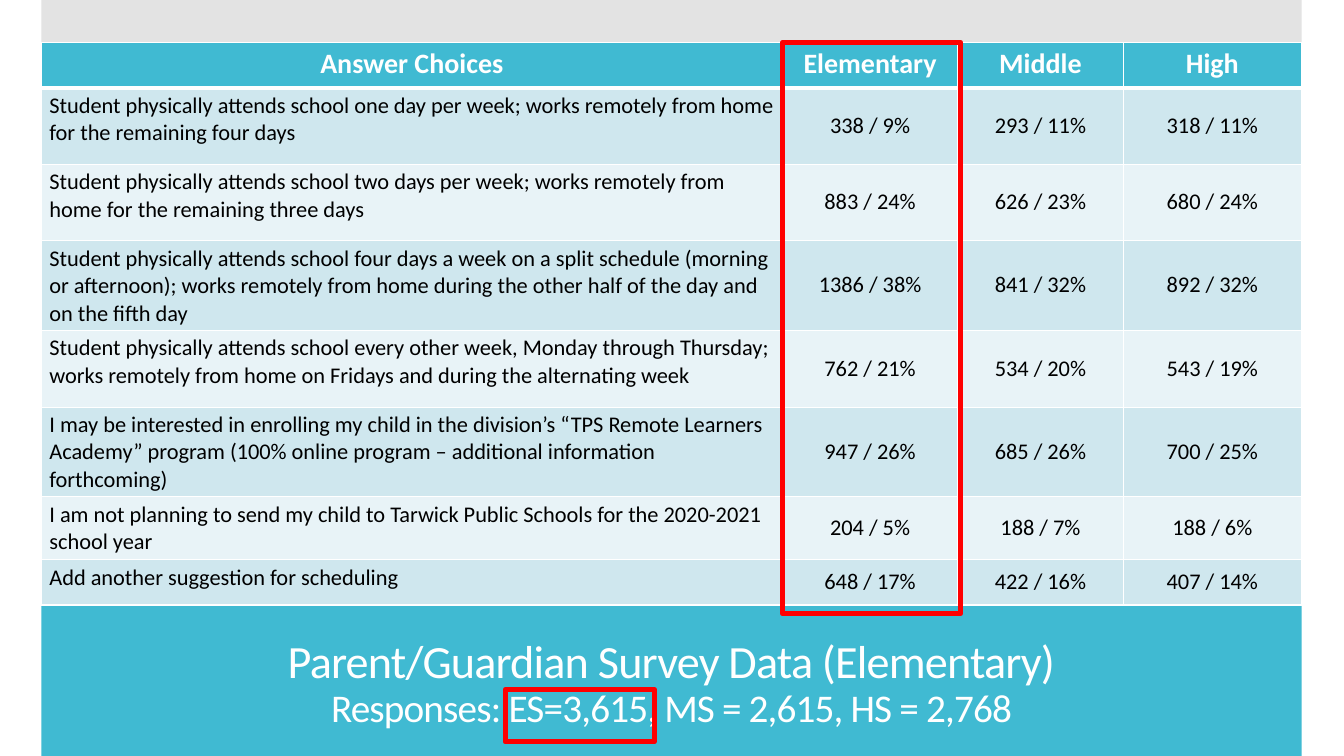
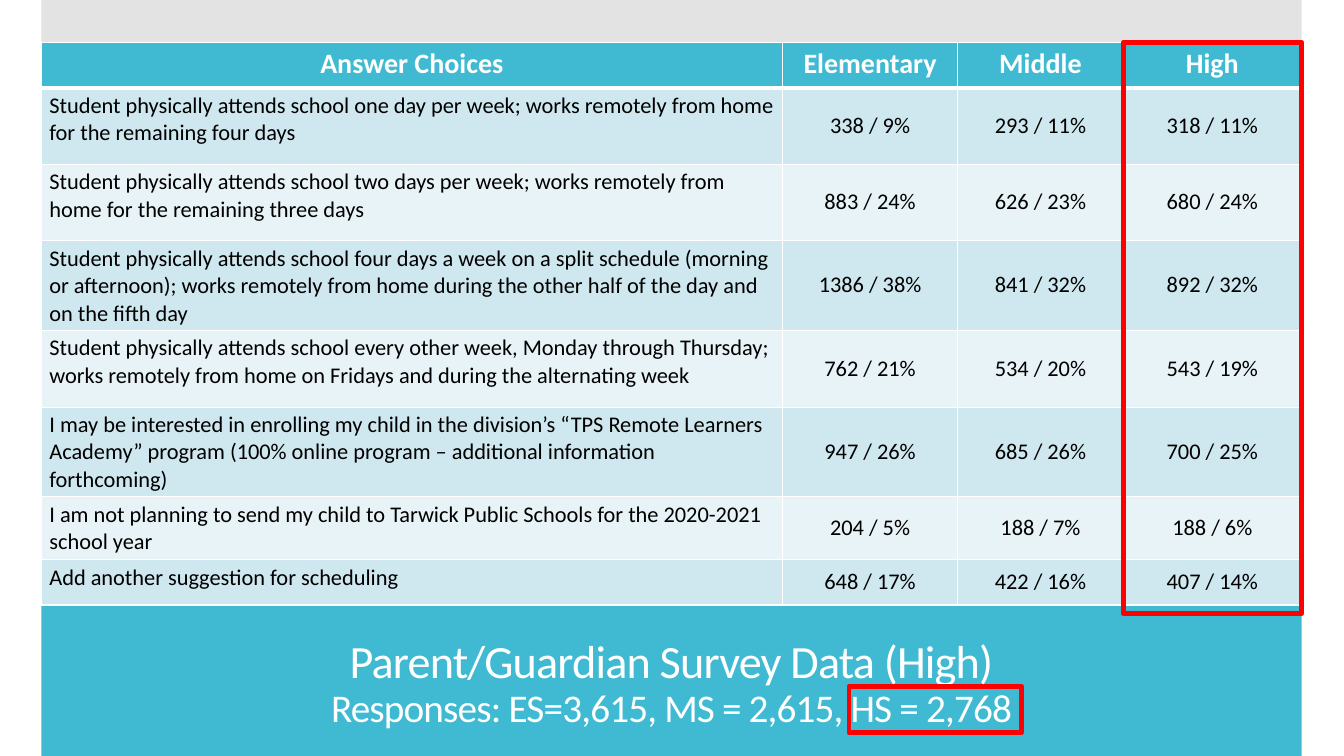
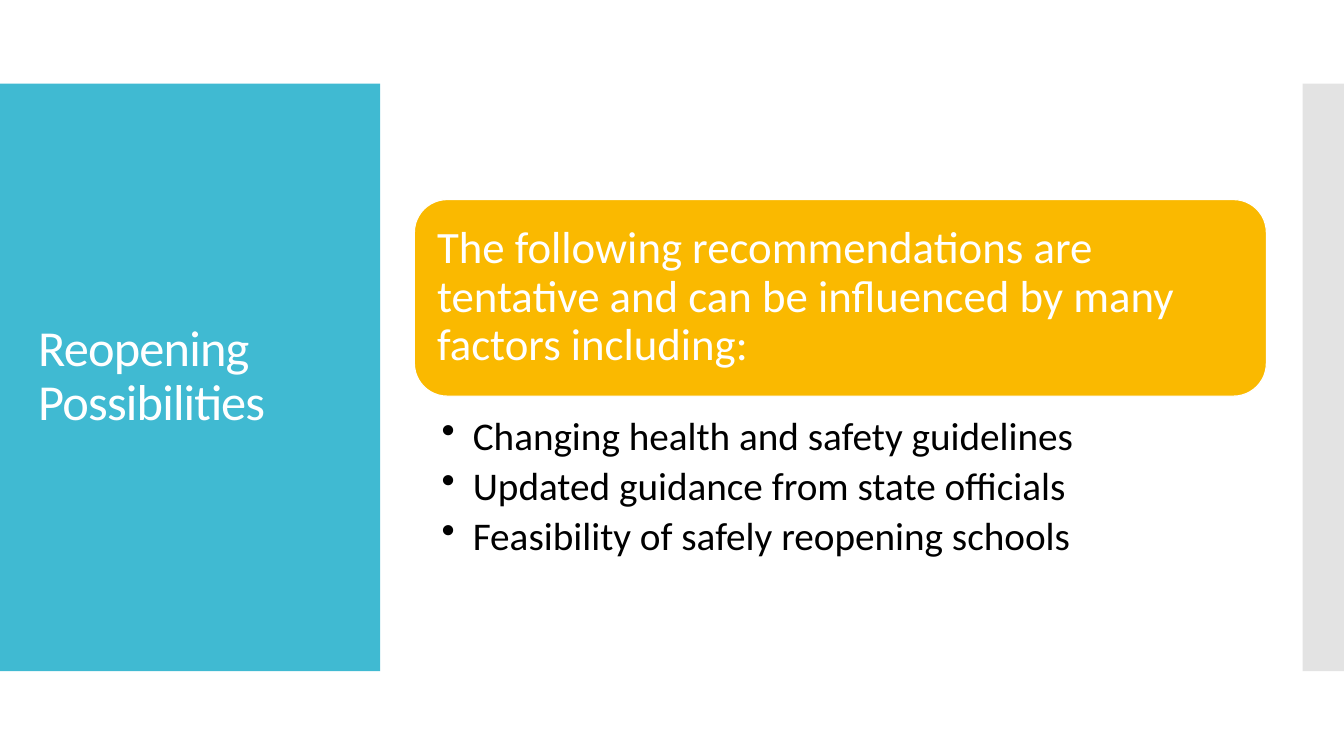
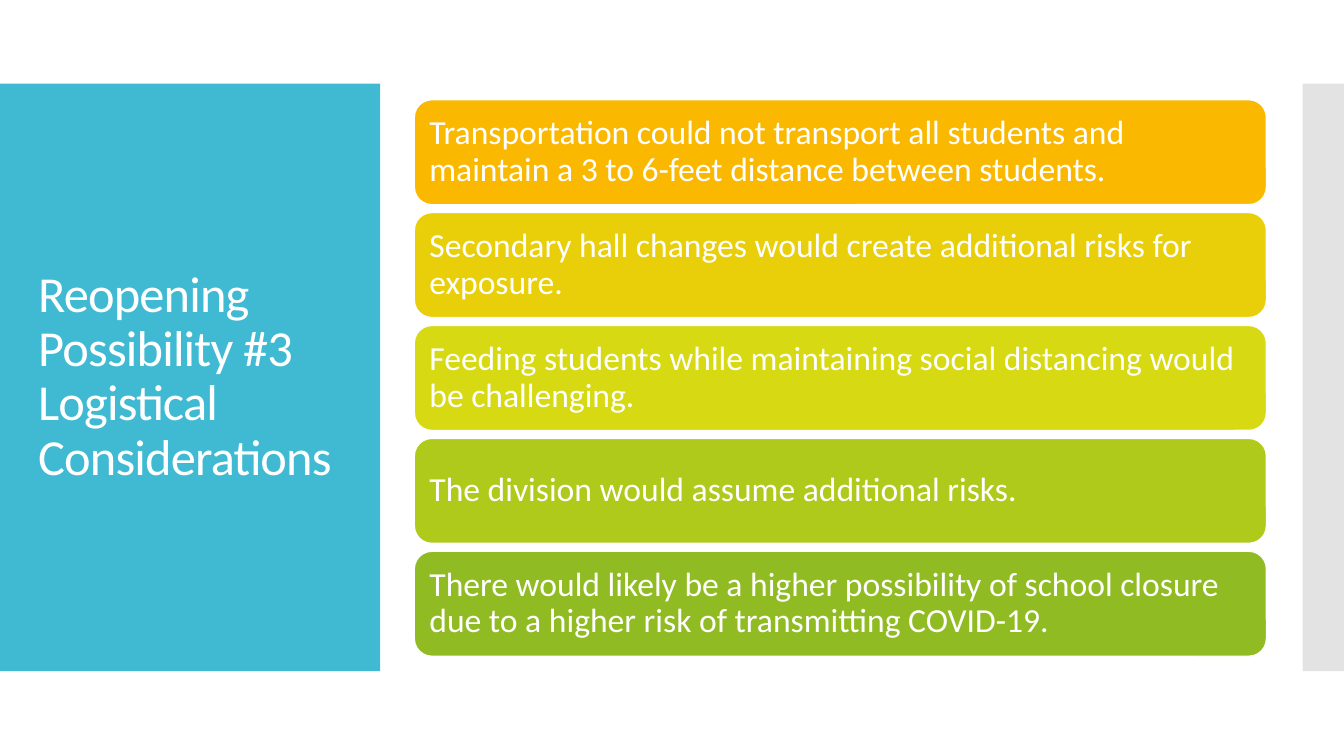
import dataclasses
import typing

import lxml.etree
import pptx
import pptx.dml.color
import pptx.enum.shapes
import pptx.enum.text
import pptx.oxml.ns
import pptx.util

Inches = pptx.util.Inches
Pt = pptx.util.Pt
Align = pptx.enum.text.PP_ALIGN
Anchor = pptx.enum.text.MSO_ANCHOR
Preset = pptx.enum.shapes.MSO_SHAPE


@dataclasses.dataclass(frozen=True)
class Theme:
    font: str = "Calibri"
    teal: str = "40BAD2"
    grey: str = "E3E3E3"
    white: str = "FFFFFF"
    black: str = "000000"
    red: str = "FF0000"
    row_tints: tuple = ("CFE7EE", "E8F3F7")
    card_fills: tuple = ("FAB900", "E9CE0A", "D7D913", "B0CA1B", "90BB23")
    side_title: int = 36
    survey_title: int = 33
    survey_responses: int = 28
    table_head: int = 20
    table_body: int = 16
    callout: int = 32
    bullet: int = 28
    card: int = 24
    title_tracking: int = -60
    line_spacing: float = 0.9


class Box(typing.NamedTuple):
    left: float
    top: float
    width: float
    height: float

    def lengths(self):
        return [Inches(value) for value in self]


THEME = Theme()
SLIDE_SIZE = (13.33, 7.5)

SURVEY_AREA = Box(0.41, 0, 12.5, 7.5)
SIDE_PANEL = Box(0, 0.83, 3.77, 5.83)
SIDE_EDGE = Box(12.92, 0.83, 0.42, 5.83)
CALLOUT_AREA = Box(4.11, 1.98, 8.45, 3.69)
CARDS_AREA = Box(4.11, 0.99, 8.45, 5.52)

COLUMN_WIDTHS = (7.35, 1.74, 1.64, 1.77)
ROW_HEIGHTS = (0.45, 0.76, 0.76, 0.76, 0.76, 0.76, 0.45, 0.45)
RESPONSES = "Responses: ES=3,615, MS = 2,615, HS = 2,768"
SURVEY_ROWS = (
    ("Answer Choices", "Elementary", "Middle", "High"),
    ("Student physically attends school one day per week; works remotely from home "
     "for the remaining four days", "338 / 9%", "293 / 11%", "318 / 11%"),
    ("Student physically attends school two days per week; works remotely from home "
     "for the remaining three days", "883 / 24%", "626 / 23%", "680 / 24%"),
    ("Student physically attends school four days a week on a split schedule (morning or "
     "afternoon); works remotely from home during the other half of the day and on the "
     "fifth day", "1386 / 38%", "841 / 32%", "892 / 32%"),
    ("Student physically attends school every other week, Monday through Thursday; works "
     "remotely from home on Fridays and during the alternating week",
     "762 / 21%", "534 / 20%", "543 / 19%"),
    ("I may be interested in enrolling my child in the division’s “TPS Remote Learners "
     "Academy” program (100% online program – additional information forthcoming)",
     "947 / 26%", "685 / 26%", "700 / 25%"),
    ("I am not planning to send my child to Tarwick Public Schools for the 2020-2021 "
     "school year", "204 / 5%", "188 / 7%", "188 / 6%"),
    ("Add another suggestion for scheduling", "648 / 17%", "422 / 16%", "407 / 14%"),
)


def rgb(code):
    return pptx.dml.color.RGBColor.from_string(code)


def style_run(run, size, color, bold=False, tracking=None):
    run.font.name = THEME.font
    run.font.size = Pt(size)
    run.font.bold = bold
    run.font.color.rgb = rgb(color)
    if tracking is not None:
        run.font._element.set("spc", str(tracking))


def set_margins(holder, left, top, right, bottom):
    holder.margin_left, holder.margin_top = Inches(left), Inches(top)
    holder.margin_right, holder.margin_bottom = Inches(right), Inches(bottom)


def add_panel(slide, box, fill=None, line=None, line_width=1, preset=Preset.RECTANGLE):
    panel = slide.shapes.add_shape(preset, *box.lengths())
    panel.shadow.inherit = False
    if fill:
        panel.fill.solid()
        panel.fill.fore_color.rgb = rgb(fill)
    else:
        panel.fill.background()
    if line:
        panel.line.color.rgb = rgb(line)
        panel.line.width = Pt(line_width)
    else:
        panel.line.fill.background()
    return panel


def add_title(slide, box, text, sizes, align=Align.LEFT):
    """Place a title whose lines take the given sizes in turn."""
    frame = slide.shapes.add_textbox(*box.lengths()).text_frame
    frame.word_wrap = True
    frame.vertical_anchor = Anchor.MIDDLE
    paragraph = frame.paragraphs[0]
    paragraph.text = text
    paragraph.alignment = align
    paragraph.line_spacing = THEME.line_spacing
    for run, size in zip(paragraph.runs, sizes):
        style_run(run, size, THEME.white, tracking=THEME.title_tracking)


def add_cell_borders(cell, widths):
    """Draw white borders; widths maps a border tag to points."""
    properties = cell._tc.get_or_add_tcPr()
    for tag, width in widths.items():
        border = lxml.etree.SubElement(
            properties, pptx.oxml.ns.qn(f"a:{tag}"), w=str(Pt(width)))
        fill = lxml.etree.SubElement(border, pptx.oxml.ns.qn("a:solidFill"))
        lxml.etree.SubElement(fill, pptx.oxml.ns.qn("a:srgbClr"), val=THEME.white)


def fill_cell(cell, text, is_header, is_choice, fill):
    if is_header:
        add_cell_borders(cell, {"lnL": 1, "lnR": 1, "lnT": 1, "lnB": 3})
    else:
        add_cell_borders(cell, {"lnL": 1, "lnR": 1, "lnB": 1})
    cell.fill.solid()
    cell.fill.fore_color.rgb = rgb(fill)
    set_margins(cell, 0.08, 0.04, 0.08, 0.05)
    cell.vertical_anchor = Anchor.TOP if is_header or is_choice else Anchor.MIDDLE
    paragraph = cell.text_frame.paragraphs[0]
    paragraph.text = text
    paragraph.alignment = Align.LEFT if is_choice and not is_header else Align.CENTER
    if is_header:
        style_run(paragraph.runs[0], THEME.table_head, THEME.white, bold=True)
    else:
        style_run(paragraph.runs[0], THEME.table_body, THEME.black)


def add_survey_table(slide, box):
    table = slide.shapes.add_table(
        len(SURVEY_ROWS), len(COLUMN_WIDTHS), *box.lengths()).table
    table.horz_banding = False
    for column, width in zip(table.columns, COLUMN_WIDTHS):
        column.width = Inches(width)
    for row, height in zip(table.rows, ROW_HEIGHTS):
        row.height = Inches(height)
    for r, answers in enumerate(SURVEY_ROWS):
        fill = THEME.row_tints[(r - 1) % 2] if r else THEME.teal
        for c, text in enumerate(answers):
            fill_cell(table.cell(r, c), text, r == 0, c == 0, fill)


def build_survey_slide(slide, area, level, column, responses_mark):
    """Show the survey table with one school level's column and count outlined."""
    left, top, width, height = area
    band_height, edge_height = 1.9, 0.42
    add_panel(slide, Box(left, top + height - band_height, width, band_height), THEME.teal)
    add_title(slide, Box(left, top + 6.23, width, 1.12),
              f"Parent/Guardian Survey Data ({level})\n{RESPONSES}",
              (THEME.survey_title, THEME.survey_responses), Align.CENTER)
    add_panel(slide, Box(left, top, width, edge_height), THEME.grey)
    table_box = Box(left, top + edge_height, width, 5.67)
    add_survey_table(slide, table_box)
    column_mark = table_box._replace(
        left=left + sum(COLUMN_WIDTHS[:column]), width=1.77)
    for mark in (column_mark, responses_mark):
        add_panel(slide, mark, line=THEME.red, line_width=3.5)


def add_side_frame(slide, title):
    add_panel(slide, SIDE_PANEL, THEME.teal)
    add_panel(slide, SIDE_EDGE, THEME.grey)
    title_box = Box(SIDE_PANEL.left + 0.28, SIDE_PANEL.top + 0.4,
                    3.22, SIDE_PANEL.height - 0.8)
    add_title(slide, title_box, title, (THEME.side_title,) * 2)


def add_card(slide, box, text, fill, size, margin):
    card = add_panel(slide, box, fill, THEME.white, 0.85, Preset.ROUNDED_RECTANGLE)
    frame = card.text_frame
    frame.word_wrap = True
    frame.vertical_anchor = Anchor.MIDDLE
    set_margins(frame, margin, margin, margin, margin)
    paragraph = frame.paragraphs[0]
    paragraph.text = text
    paragraph.alignment = Align.LEFT
    paragraph.line_spacing = THEME.line_spacing
    style_run(paragraph.runs[0], size, THEME.white)


def add_bullets(slide, box, items):
    frame = slide.shapes.add_textbox(*box.lengths()).text_frame
    frame.word_wrap = True
    set_margins(frame, 0.27, 0.04, 0.22, 0.04)
    frame.text = "\n".join(items)
    for paragraph in frame.paragraphs:
        paragraph.line_spacing = THEME.line_spacing
        paragraph.space_after = Pt(5.6)
        properties = paragraph._p.get_or_add_pPr()
        properties.set("marL", str(Inches(0.31)))
        properties.set("indent", str(-Inches(0.31)))
        lxml.etree.SubElement(properties, pptx.oxml.ns.qn("a:buChar"), char="•")
        style_run(paragraph.runs[0], THEME.bullet, THEME.black)


def build_callout_slide(slide, area, title, callout, items):
    add_side_frame(slide, title)
    callout_height, bullets_top = 1.95, 2.11
    add_card(slide, area._replace(height=callout_height), callout,
             THEME.card_fills[0], THEME.callout, 0.13)
    add_bullets(slide, area._replace(top=area.top + bullets_top,
                                     height=area.height - bullets_top), items)


def build_cards_slide(slide, area, title, texts):
    add_side_frame(slide, title)
    gap = 0.08
    height = (area.height - gap * (len(texts) - 1)) / len(texts)
    for i, (text, fill) in enumerate(zip(texts, THEME.card_fills)):
        box = area._replace(top=area.top + i * (height + gap), height=height)
        add_card(slide, box, text, fill, THEME.card, 0.1)


def main():
    deck = pptx.Presentation()
    deck.slide_width, deck.slide_height = map(Inches, SLIDE_SIZE)
    blank = deck.slide_layouts[6]

    def new_slide():
        return deck.slides.add_slide(blank)

    build_survey_slide(new_slide(), SURVEY_AREA, "Elementary", 1,
                       Box(5.01, 6.84, 1.48, 0.52))
    build_survey_slide(new_slide(), SURVEY_AREA, "High", 3,
                       Box(8.42, 6.81, 1.71, 0.46))
    build_callout_slide(
        new_slide(), CALLOUT_AREA, "Reopening Possibilities",
        "The following recommendations are tentative and can be influenced by many "
        "factors including:",
        ("Changing health and safety guidelines",
         "Updated guidance from state officials",
         "Feasibility of safely reopening schools"))
    build_cards_slide(
        new_slide(), CARDS_AREA, "Reopening Possibility #3\nLogistical Considerations",
        ("Transportation could not transport all students and maintain a 3 to 6-feet "
         "distance between students.",
         "Secondary hall changes would create additional risks for exposure.",
         "Feeding students while maintaining social distancing would be challenging.",
         "The division would assume additional risks.",
         "There would likely be a higher possibility of school closure due to a higher "
         "risk of transmitting COVID-19."))
    deck.save("out.pptx")


if __name__ == "__main__":
    main()
